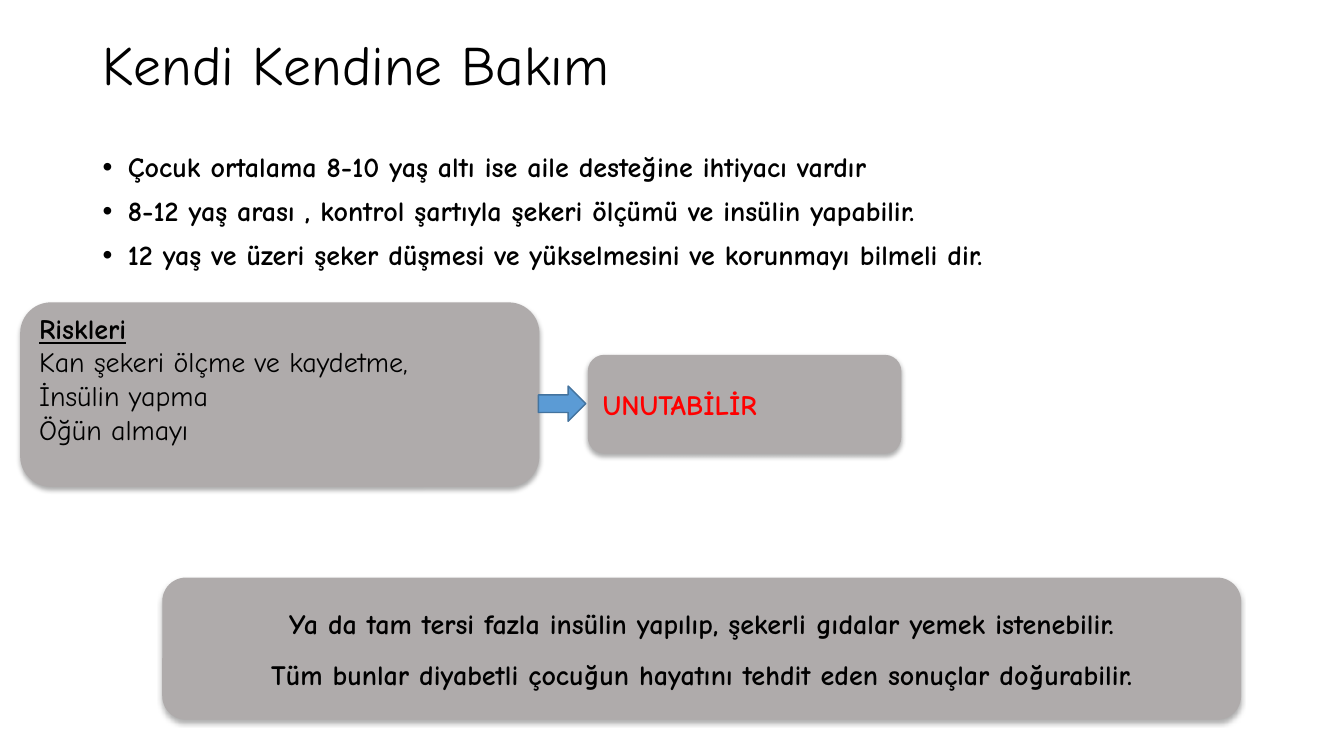
from lxml import etree
from pptx import Presentation
from pptx.dml.color import RGBColor
from pptx.enum.shapes import MSO_SHAPE
from pptx.enum.text import MSO_ANCHOR, PP_ALIGN
from pptx.oxml.ns import qn
from pptx.util import Inches, Pt

FONT = "Comic Neue"
COLORS = {
    "text": "000000",
    "warning": "FF0000",
    "panel": "AFABAB",
    "arrow": "5B9BD5",
    "arrow_line": "43739E",
    "shadow": "000000",
}


def color(name):
    """Return the named palette colour."""
    return RGBColor.from_string(COLORS[name])


def add_text(frame, text, size=20, bold=False, underline=False, ink="text",
             align=PP_ALIGN.LEFT, line_spacing=None, before=0, after=0, bullet=False):
    """Append one formatted paragraph to a text frame."""
    first = frame.paragraphs[0]
    paragraph = frame.add_paragraph() if first.runs else first
    paragraph.alignment = align
    paragraph.line_spacing = line_spacing
    paragraph.space_before = Pt(before)
    paragraph.space_after = Pt(after)
    run = paragraph.add_run()
    run.text = text
    font = run.font
    font.name, font.size, font.bold, font.underline = FONT, Pt(size), bold, underline
    font.color.rgb = color(ink)
    if bullet:
        properties = paragraph._p.get_or_add_pPr()
        properties.set("marL", str(Inches(0.25)))
        properties.set("indent", str(Inches(-0.25)))
        etree.SubElement(properties, qn("a:buFont")).set("typeface", "Arial")
        etree.SubElement(properties, qn("a:buChar")).set("char", "•")


def add_text_frame(slide, box):
    """Add a wrapping text box and return its frame."""
    frame = slide.shapes.add_textbox(*map(Inches, box)).text_frame
    frame.word_wrap = True
    return frame


def add_shadow(shape):
    """Give a shape a soft shadow straight below it."""
    shape.shadow.inherit = False
    effects = shape._element.spPr.find(qn("a:effectLst"))
    shadow = etree.SubElement(effects, qn("a:outerShdw"), blurRad=str(Pt(3.5)),
                              dist=str(Pt(2.2)), dir="5400000", algn="ctr", rotWithShape="0")
    tint = etree.SubElement(shadow, qn("a:srgbClr"), val=COLORS["shadow"])
    etree.SubElement(tint, qn("a:alpha"), val="32000")


def add_panel(slide, box, anchor=MSO_ANCHOR.MIDDLE):
    """Add a grey rounded panel and return its text frame."""
    panel = slide.shapes.add_shape(MSO_SHAPE.ROUNDED_RECTANGLE, *map(Inches, box))
    panel.fill.solid()
    panel.fill.fore_color.rgb = color("panel")
    panel.line.fill.background()
    add_shadow(panel)
    frame = panel.text_frame
    frame.word_wrap = True
    frame.vertical_anchor = anchor
    return frame


def add_title(slide, box):
    """Add the slide title."""
    frame = add_text_frame(slide, box)
    frame.margin_top = 0
    add_text(frame, "Kendi Kendine Bakım", size=39.6, line_spacing=0.9)


def add_age_list(slide, box):
    """Add the bulleted list of age groups."""
    frame = add_text_frame(slide, box)
    for text in (
        "Çocuk ortalama 8-10 yaş altı ise aile desteğine ihtiyacı vardır",
        "8-12 yaş arası , kontrol şartıyla şekeri ölçümü ve insülin yapabilir.",
        "12 yaş ve üzeri şeker düşmesi ve yükselmesini ve korunmayı bilmeli dir.",
    ):
        add_text(frame, text, bold=True, line_spacing=0.9, before=10, bullet=True)


def add_risks(slide, box):
    """Add the risks panel, its arrow and the warning panel."""
    left, top, width, height = box
    frame = add_panel(slide, (left, top, width, height), MSO_ANCHOR.TOP)
    frame.margin_top = 0
    add_text(frame, "Riskleri", bold=True, underline=True)
    for text in ("Kan şekeri ölçme ve kaydetme,", "İnsülin yapma", "Öğün almayı"):
        add_text(frame, text)

    warning = add_panel(slide, (left + 5.63, top + 0.52, 3.11, 0.98))
    add_text(warning, "UNUTABİLİR", bold=True, ink="warning")

    arrow_box = (left + width - 0.01, top + 0.83, 0.47, 0.35)
    arrow = slide.shapes.add_shape(MSO_SHAPE.RIGHT_ARROW, *map(Inches, arrow_box))
    arrow.shadow.inherit = False
    arrow.fill.solid()
    arrow.fill.fore_color.rgb = color("arrow")
    arrow.line.color.rgb = color("arrow_line")
    arrow.line.width = Pt(1)


def add_conclusion(slide, box):
    """Add the closing panel."""
    frame = add_panel(slide, box)
    for text in (
        "Ya da tam tersi fazla insülin yapılıp, şekerli gıdalar yemek istenebilir.",
        "Tüm bunlar diyabetli çocuğun hayatını tehdit eden sonuçlar doğurabilir.",
    ):
        add_text(frame, text, bold=True, align=PP_ALIGN.CENTER, after=12)


def main():
    """Build and save the slide."""
    presentation = Presentation()
    presentation.slide_width = Inches(13.33)
    presentation.slide_height = Inches(7.5)
    slide = presentation.slides.add_slide(presentation.slide_layouts[6])
    add_title(slide, (0.92, 0.37, 11.5, 1.07))
    add_age_list(slide, (0.92, 1.47, 11.5, 5.29))
    add_risks(slide, (0.2, 3, 5.15, 1.83))
    add_conclusion(slide, (1.61, 5.73, 10.7, 1.41))
    presentation.save("out.pptx")


if __name__ == "__main__":
    main()
